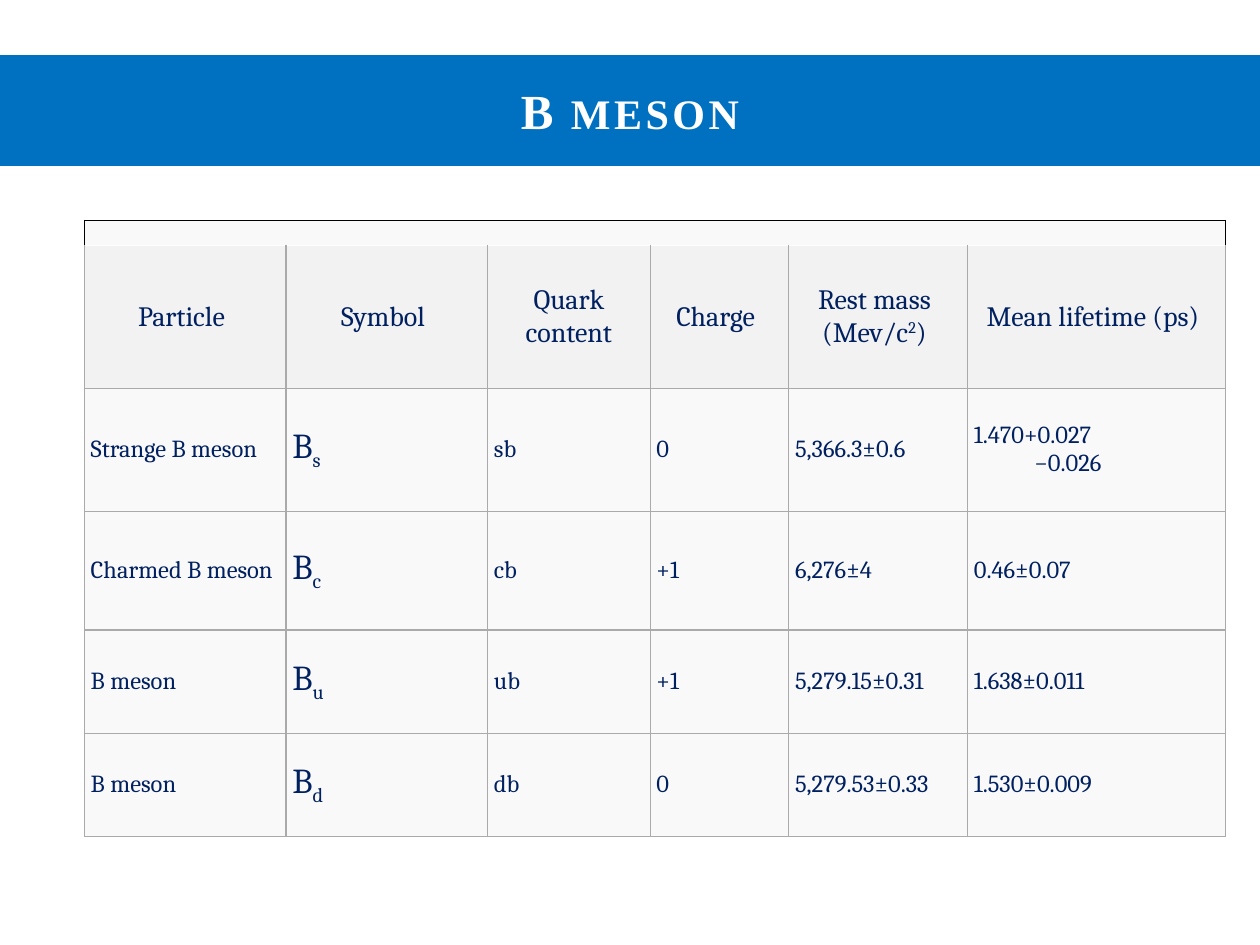
from lxml import etree
from pptx import Presentation
from pptx import util as u
from pptx.dml.color import RGBColor
from pptx.enum import shapes, text
from pptx.oxml import ns

COLUMNS = [1.6, 1.6, 1.29, 1.1, 1.42, 2.05]
ROWS = [0.2, 1.13, 0.98, 0.94, 0.82, 0.82]
HEADINGS = ["Particle", "Symbol", "Quark content", "Charge", "Rest mass (Mev/c", "Mean lifetime (ps)"]
MESONS = [
    ("Strange B meson", "s", "sb", "0", "5,366.3±0.6", "1.470+0.027"),
    ("Charmed B meson", "c", "cb", "+1", "6,276±4", "0.46±0.07"),
    ("B meson", "u", "ub", "+1", "5,279.15±0.31", "1.638±0.011"),
    ("B meson", "d", "db", "0", "5,279.53±0.33", "1.530±0.009"),
]


def color(value):
    """Turn a hex string into a colour."""
    return RGBColor.from_string(value)


def add_span(para, words, size, baseline=0, name="Cambria", hue="002060", bold=False):
    """Add a formatted run and return it."""
    span = para.add_run()
    span.text = words
    for key, value in {"size": u.Pt(size), "name": name, "bold": bold}.items():
        setattr(span.font, key, value)
    span.font.color.rgb = color(hue)
    if baseline:
        span.font._element.set("baseline", str(baseline * 1000))
    return span


def add_title(page):
    """Add the title band across the page."""
    band = page.shapes.add_shape(
        shapes.MSO_SHAPE.RECTANGLE, u.Inches(0), u.Inches(0.44), u.Inches(10), u.Inches(0.87))
    band.shadow.inherit = False
    band.fill.solid()
    band.fill.fore_color.rgb = color("0070C0")
    band.line.color.rgb = color("0070C0")
    band.line.width = u.Pt(0.75)
    band.text_frame.vertical_anchor = text.MSO_ANCHOR.MIDDLE
    para = band.text_frame.paragraphs[0]
    para.alignment = text.PP_ALIGN.CENTER
    for words, size in (("В", 28), (" MESON", 24)):
        span = add_span(para, words, size, name="Times New Roman", hue="FFFFFF", bold=True)
        span.font._element.set("spc", "200")


def style_cell(cell, fill, border, sides, right=0.05):
    """Set the borders, fill, margins and anchor of a cell."""
    properties = cell._tc.get_or_add_tcPr()
    for side in sides:
        line = etree.SubElement(properties, ns.qn(f"a:ln{side}"), w=str(u.Pt(0.75)))
        solid = etree.SubElement(line, ns.qn("a:solidFill"))
        etree.SubElement(solid, ns.qn("a:srgbClr"), val=border)
    cell.fill.solid()
    cell.fill.fore_color.rgb = color(fill)
    layout = {
        "margin_left": u.Inches(0.05), "margin_right": u.Inches(right),
        "margin_top": u.Inches(0.03), "margin_bottom": u.Inches(0.03),
        "vertical_anchor": text.MSO_ANCHOR.MIDDLE,
    }
    for key, value in layout.items():
        setattr(cell, key, value)


def fill_blank_row(table):
    """Merge the top row into one empty outlined strip."""
    for column in range(len(COLUMNS)):
        style_cell(table.cell(0, column), "F9F9F9", "000000", "LRTB")
    strip = table.cell(0, 0)
    strip.merge(table.cell(0, len(COLUMNS) - 1))
    etree.SubElement(strip.text_frame.paragraphs[0]._p, ns.qn("a:endParaRPr"), sz="800")


def fill_headings(table):
    """Write the column headings."""
    for column, heading in enumerate(HEADINGS):
        cell = table.cell(1, column)
        style_cell(cell, "F2F2F2", "AAAAAA", "LRB", 0.05 if column == 2 else 0.11)
        para = cell.text_frame.paragraphs[0]
        para.alignment = text.PP_ALIGN.CENTER
        add_span(para, heading, 16)
        if heading.startswith("Rest mass"):
            add_span(para, "2", 16, 30)
            add_span(para, ")", 16)


def fill_mesons(table):
    """Write one row for each meson."""
    for row, meson in enumerate(MESONS, 2):
        for column, words in enumerate(meson):
            cell = table.cell(row, column)
            style_cell(cell, "F9F9F9", "AAAAAA", "LRTB")
            para = cell.text_frame.paragraphs[0]
            if column == 1:
                add_span(para, "B", 20)
                add_span(para, words, 20, -25)
            else:
                add_span(para, words, 14)
    lower = table.cell(2, 5).text_frame.add_paragraph()
    lower._p.get_or_add_pPr().set("marL", str(u.Inches(0.48)))
    add_span(lower, "−0.026", 14)


def add_meson_table(page):
    """Add the table of meson properties."""
    frame = page.shapes.add_table(
        len(ROWS), len(COLUMNS), u.Inches(0.67), u.Inches(1.75),
        u.Inches(sum(COLUMNS)), u.Inches(sum(ROWS)))
    table = frame.table
    table.first_row = table.horz_banding = False
    for column, width in zip(table.columns, COLUMNS):
        column.width = u.Inches(width)
    for row, height in zip(table.rows, ROWS):
        row.height = u.Inches(height)
    fill_blank_row(table)
    fill_headings(table)
    fill_mesons(table)


def main():
    """Build and save the deck."""
    deck = Presentation()
    deck.slide_width, deck.slide_height = u.Inches(10), u.Inches(7.5)
    page = deck.slides.add_slide(deck.slide_layouts[6])
    add_meson_table(page)
    add_title(page)
    deck.save("out.pptx")


if __name__ == "__main__":
    main()
